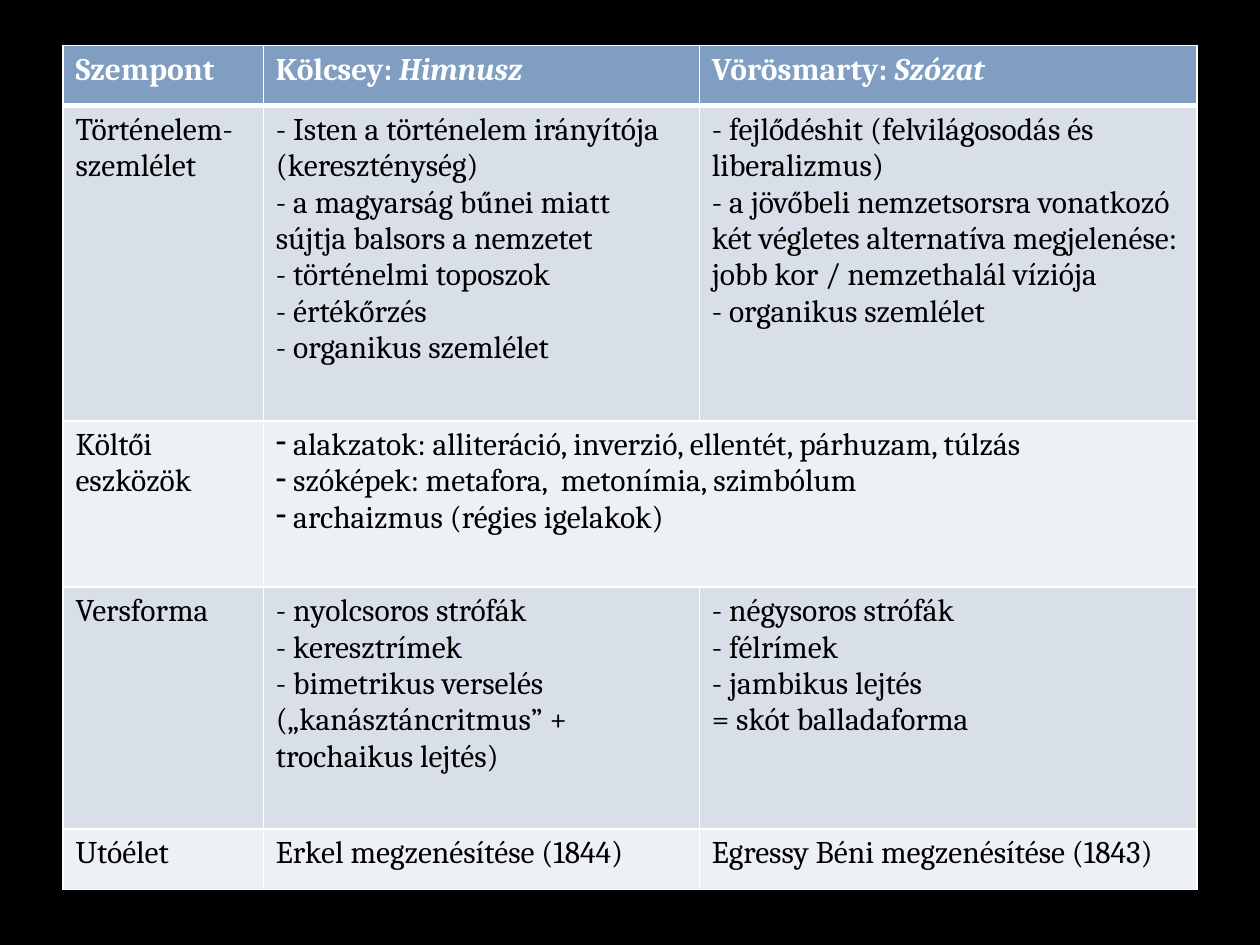
from lxml import etree
from pptx import Presentation
from pptx.dml.color import RGBColor
from pptx.oxml.ns import qn
from pptx.util import Pt

COLORS = {"page": "000000", "header": "809EC2", "odd": "D8DFE9", "even": "EDF0F4",
          "line": "FFFFFF", "header_text": "FFFFFF", "text": "000000"}
FONT = "Cambria"
FONT_SIZE = 18
LEFT, TOP = 36, 25.92
COLUMN_WIDTHS = [114.48, 249.12, 284.4]
ROW_HEIGHTS = [34.56, 180, 95.04, 138.24, 34.56]
THIN, THICK = 1, 3
DASH = "-"

HEADER = [("Szempont", ""), ("Kölcsey: ", "Himnusz"), ("Vörösmarty: ", "Szózat")]
ROWS = [
    [["Történelem-szemlélet"],
     ["- Isten a történelem irányítója (kereszténység)",
      "- a magyarság bűnei miatt sújtja balsors a nemzetet",
      "- történelmi toposzok",
      "- értékőrzés",
      "- organikus szemlélet"],
     ["- fejlődéshit (felvilágosodás és liberalizmus)",
      "- a jövőbeli nemzetsorsra vonatkozó két végletes alternatíva megjelenése: "
      "jobb kor / nemzethalál víziója",
      "- organikus szemlélet"]],
    [["Költői eszközök"],
     [" alakzatok: alliteráció, inverzió, ellentét, párhuzam, túlzás",
      " szóképek: metafora,  metonímia, szimbólum",
      " archaizmus (régies igelakok)"]],
    [["Versforma"],
     ["- nyolcsoros strófák",
      "- keresztrímek",
      "- bimetrikus verselés  („kanásztáncritmus” + trochaikus lejtés)"],
     ["- négysoros strófák",
      "- félrímek",
      "- jambikus lejtés",
      "= skót balladaforma"]],
    [["Utóélet"],
     ["Erkel megzenésítése (1844)"],
     ["Egressy Béni megzenésítése (1843)"]],
]


def color(name):
    return RGBColor.from_string(COLORS[name])


def add_span(para, text, color_name, bold=False, italic=False):
    span = para.add_run()
    span.text = text
    font = span.font
    font.name, font.size = FONT, Pt(FONT_SIZE)
    font.bold, font.italic = bold, italic
    font.color.rgb = color(color_name)


def add_bullet(para):
    properties = para._p.get_or_add_pPr()
    etree.SubElement(properties, qn("a:buFontTx"))
    etree.SubElement(properties, qn("a:buChar"), char=DASH)


def style_cell(cell, fill_name, top, bottom):
    properties = cell._tc.get_or_add_tcPr()
    for side, width in (("L", THIN), ("R", THIN), ("T", top), ("B", bottom)):
        line = etree.SubElement(properties, qn(f"a:ln{side}"), w=str(int(Pt(width))))
        fill = etree.SubElement(line, qn("a:solidFill"))
        etree.SubElement(fill, qn("a:srgbClr"), val=COLORS["line"])
    cell.fill.solid()
    cell.fill.fore_color.rgb = color(fill_name)


def fill_header(table):
    for column, (author, title) in enumerate(HEADER):
        para = table.cell(0, column).text_frame.paragraphs[0]
        add_span(para, author, "header_text", bold=True)
        if title:
            add_span(para, title, "header_text", bold=True, italic=True)


def fill_body(table):
    for row, cells in enumerate(ROWS, start=1):
        merged = len(cells) < len(COLUMN_WIDTHS)
        if merged:
            table.cell(row, 1).merge(table.cell(row, len(COLUMN_WIDTHS) - 1))
        for column, lines in enumerate(cells):
            frame = table.cell(row, column).text_frame
            for index, text in enumerate(lines):
                para = frame.add_paragraph() if index else frame.paragraphs[0]
                if merged and column:
                    add_bullet(para)
                add_span(para, text, "text")


def main():
    """Build the slide that compares two poems in a table."""
    deck = Presentation()
    deck.slide_width, deck.slide_height = Pt(720), Pt(540)
    page = deck.slides.add_slide(deck.slide_layouts[6])
    page.background.fill.solid()
    page.background.fill.fore_color.rgb = color("page")

    table = page.shapes.add_table(
        len(ROW_HEIGHTS), len(COLUMN_WIDTHS), Pt(LEFT), Pt(TOP),
        Pt(sum(COLUMN_WIDTHS)), Pt(sum(ROW_HEIGHTS))).table
    for column, width in zip(table.columns, COLUMN_WIDTHS):
        column.width = Pt(width)
    for index, (row, height) in enumerate(zip(table.rows, ROW_HEIGHTS)):
        row.height = Pt(height)
        fill_name = "header" if index == 0 else "odd" if index % 2 else "even"
        for cell in row.cells:
            style_cell(cell, fill_name, THICK if index == 1 else THIN,
                       THICK if index == 0 else THIN)
    fill_header(table)
    fill_body(table)
    deck.save("out.pptx")


if __name__ == "__main__":
    main()
